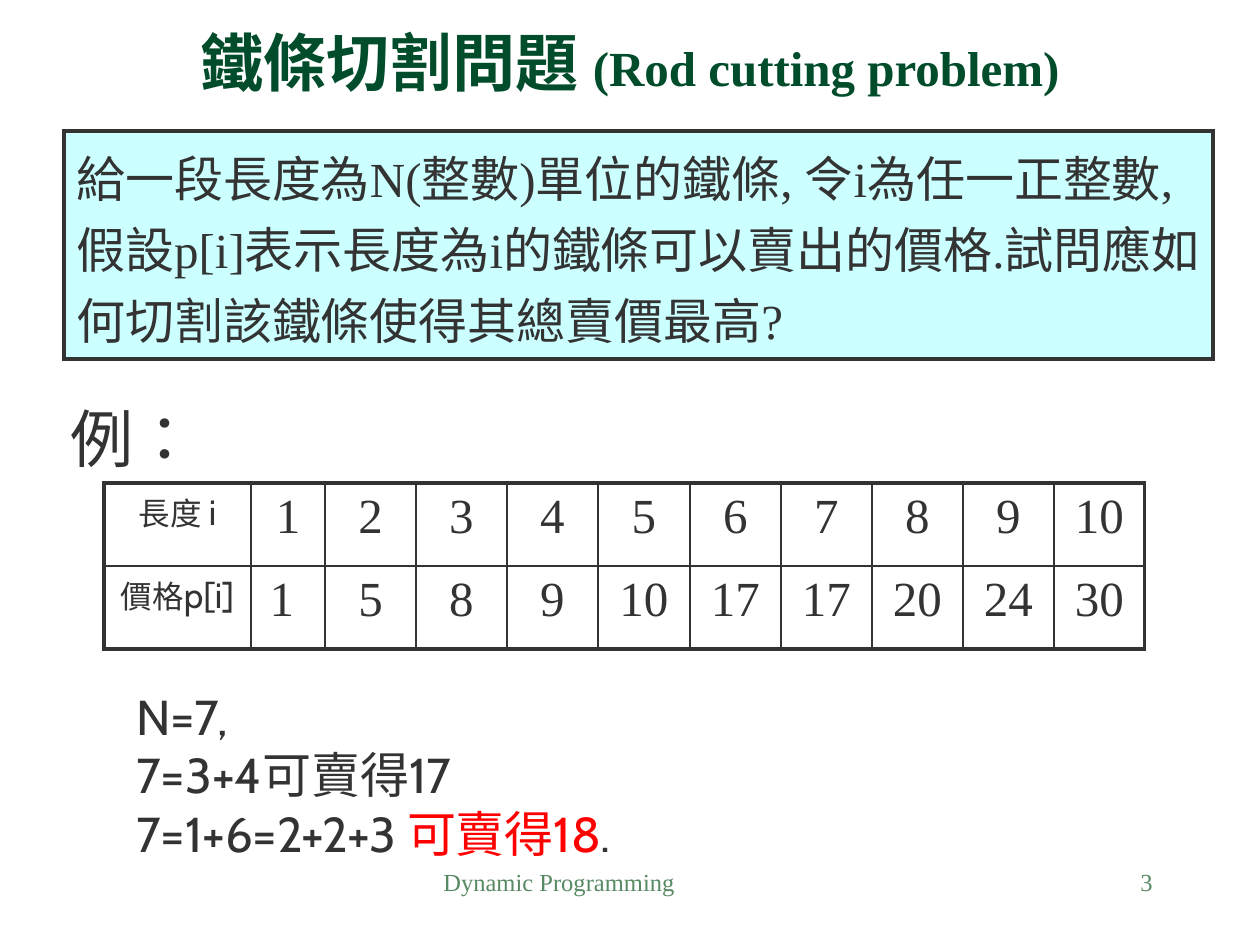
from lxml.etree import SubElement
from pptx import Presentation
from pptx.dml.color import RGBColor as Rgb
from pptx.enum.lang import MSO_LANGUAGE_ID as Language
from pptx.enum.shapes import MSO_SHAPE as Shape
from pptx.enum.text import MSO_ANCHOR as Anchor, PP_ALIGN as Align
from pptx.oxml.ns import qn
from pptx.util import Emu, Pt

SCALE = 914400 / 126
COLORS = {"ink": "333333", "title": "004C2B", "footer": "578963",
          "panel": "CCFFFF", "answer": "FF0000"}
SERIF, SANS = "Times New Roman", "Cabin"
BASE = {"name": SERIF, "language_id": Language.TRADITIONAL_CHINESE}
BODY = BASE | {"size": Pt(28), "color": "ink"}
TITLE = BASE | {"size": Pt(36), "bold": True, "color": "title"}
FOOTER = BASE | {"size": Pt(14), "color": "footer"}
EXAMPLE = BODY | {"size": Pt(36)}
WORKING = BODY | {"name": SANS}
SMALL = BODY | {"size": Pt(18)}
SYMBOL = WORKING | {"size": Pt(20)}
THIN, THICK = 1, 2.25

LENGTHS = [[("長度 ", SMALL), ("i", SYMBOL)]] + [[(str(n), BODY)] for n in range(1, 11)]
PRICES = [[("價格", SMALL | {"name": SANS}), ("p[i]", SYMBOL)]] + [
    [(price, BODY)] for price in "1 ,5,8,9,10,17,17,20,24,30".split(",")]
QUESTION = ("給一段長度為N(整數)單位的鐵條, 令i為任一正整數,"
            "假設p[i]表示長度為i的鐵條可以賣出的價格."
            "試問應如何切割該鐵條使得其總賣價最高?")


def px(*lengths):
    """Turn px lengths into EMU."""
    return [Emu(round(length * SCALE)) for length in lengths]


def color(name):
    """Look up a named colour."""
    return Rgb.from_string(COLORS[name])


def write(frame, lines, **para_format):
    """Fill a text frame with lines of (text, format) spans."""
    for index, line in enumerate(lines):
        para = frame.add_paragraph() if index else frame.paragraphs[0]
        for key, value in para_format.items():
            setattr(para, key, value)
        for text, values in line:
            span = para.add_run()
            span.text = text
            for key, value in values.items():
                if key == "color":
                    span.font.color.rgb = color(value)
                else:
                    setattr(span.font, key, value)


def add_text(page, place, lines, anchor=Anchor.TOP, **para_format):
    """Add a wrapping text box."""
    frame = page.shapes.add_textbox(*px(*place)).text_frame
    frame.word_wrap = True
    frame.vertical_anchor = anchor
    write(frame, lines, **para_format)


def add_panel(page, place, lines):
    """Add the filled and outlined question box with square corners."""
    box = page.shapes.add_shape(Shape.RECTANGLE, *px(*place))
    box.shadow.inherit = False
    box.fill.solid()
    box.fill.fore_color.rgb = color("panel")
    box.line.color.rgb = color("ink")
    box.line.width = Pt(2)
    SubElement(box._element.spPr.find(qn("a:ln")), qn("a:miter"), lim="800000")
    frame = box.text_frame
    frame.word_wrap = True
    frame.vertical_anchor = Anchor.TOP
    write(frame, lines, alignment=Align.LEFT, line_spacing=1.2)


def set_borders(cell, widths):
    """Draw the cell's left, right, top and bottom borders."""
    properties = cell._tc.get_or_add_tcPr()
    for index, (side, width) in enumerate(widths.items()):
        line = SubElement(properties, qn(f"a:ln{side}"), w=str(Pt(width)))
        fill = SubElement(line, qn("a:solidFill"))
        SubElement(fill, qn("a:srgbClr"), val=COLORS["ink"])
        properties.insert(index, line)


def add_price_table(page, place, widths, rows):
    """Add the price table with a thick outer frame."""
    last_row, last_column = len(rows) - 1, len(widths) - 1
    table = page.shapes.add_table(len(rows), len(widths), *px(*place)).table
    table.first_row = table.horz_banding = False
    for column, width in zip(table.columns, px(*widths)):
        column.width = width
    for r, row in enumerate(rows):
        for c, spans in enumerate(row):
            cell = table.cell(r, c)
            cell.fill.background()
            cell.margin_left, cell.margin_right = px(4, 4)
            write(cell.text_frame, [spans], alignment=Align.CENTER)
            outer = {"L": c == 0, "R": c == last_column,
                     "T": r == 0, "B": r == last_row}
            set_borders(cell, {side: THICK if edge else THIN
                               for side, edge in outer.items()})


def main():
    """Build the rod cutting slide."""
    deck = Presentation()
    deck.slide_width, deck.slide_height = px(1260, 945)
    page = deck.slides.add_slide(deck.slide_layouts[6])

    add_text(page, (431, 861, 399, 63), [[("Dynamic Programming", FOOTER)]])
    add_text(page, (903, 861, 262, 63), [[("3", FOOTER)]], alignment=Align.RIGHT)
    add_text(page, (84, 32, 1092, 73),
             [[("鐵條切割問題 ", TITLE),
               ("(Rod cutting problem)", TITLE | {"size": Pt(28)})]],
             Anchor.BOTTOM, alignment=Align.CENTER)
    add_panel(page, (64, 131, 1149, 228), [[(QUESTION, BODY)]])
    add_price_table(page, (104, 483, 1041, 166),
                    [147, 74] + [91] * 3 + [92] + [91] * 5, [LENGTHS, PRICES])
    add_text(page, (54, 393, 159, 88), [[("例：", EXAMPLE)]], alignment=Align.CENTER)
    add_text(page, (124, 680, 853, 189),
             [[("N=7,", WORKING)],
              [("7=3+4可賣得17", WORKING)],
              [("7=1+6=2+2+3 ", WORKING),
               ("可賣得18", WORKING | {"color": "answer"}),
               (".", WORKING)]])

    deck.save("out.pptx")


if __name__ == "__main__":
    main()
